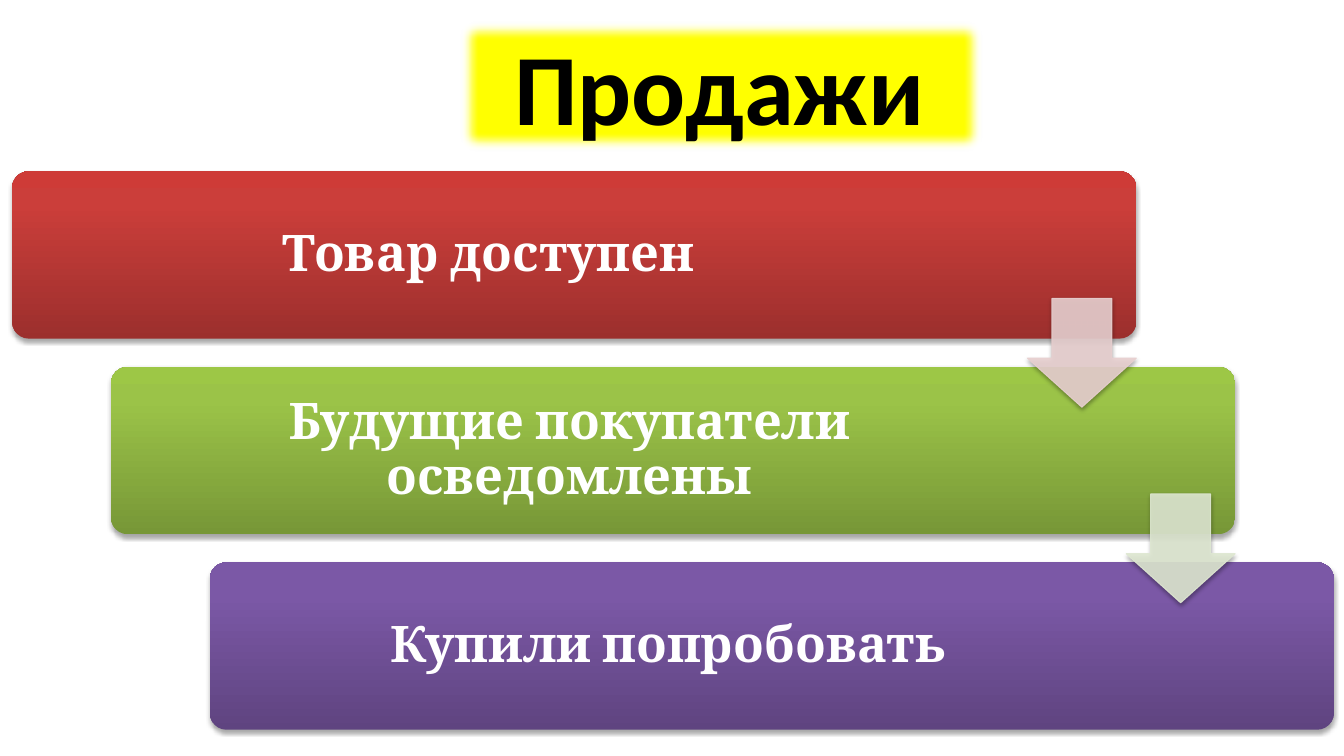
from pptx import Presentation
from pptx import util as u
from pptx.dml.color import RGBColor
from pptx.enum import shapes, text
from pptx.oxml import parse_xml
from pptx.oxml.ns import nsdecls, qn

STEPS = [
    ("Товар доступен", ("9C2F2D", "CB3E3A", "CE3B37"), 1.7, "E8D0D0"),
    ("Будущие покупатели осведомлены", ("779737", "9BC348", "9DC746"), 2.06, "DEE7D1"),
    ("Купили попробовать", ("5F4480", "7B58A6", "7C57A8"), 2.06, None),
]
BAR_WIDTH, BAR_HEIGHT = 11.15, 1.66
STEP_RIGHT, STEP_DOWN = 0.98, 1.94
ARROW_SIZE, ARROW_DROP = 1.08, 1.26
SOFT_EDGE = '<a:softEdge rad="112500"/>'
SHADOW = (
    '<a:outerShdw blurRad="40000" dist="23000" dir="5400000" rotWithShape="0">'
    '<a:srgbClr val="000000"><a:alpha val="35000"/></a:srgbClr></a:outerShdw>'
)


def color(value):
    """Return the colour for a hex string."""
    return RGBColor.from_string(value)


def add_effect(shape, effect):
    """Give the shape one effect in place of the inherited ones."""
    shape.shadow.inherit = False
    effects = shape._element.spPr.find(qn("a:effectLst"))
    effects.append(parse_xml(effect.replace(" ", f" {nsdecls('a')} ", 1)))


def fill_gradient(shape, colors):
    """Fill the shape with a gradient that rises from the first colour to the last."""
    shape.fill.gradient()
    gradient = shape._element.spPr.find(qn("a:gradFill"))
    stops = "".join(
        f'<a:gs pos="{position}"><a:srgbClr val="{value}"/></a:gs>'
        for position, value in zip((0, 80000, 100000), colors)
    )
    gradient.replace(
        gradient.find(qn("a:gsLst")),
        parse_xml(f"<a:gsLst {nsdecls('a')}>{stops}</a:gsLst>"),
    )
    gradient.find(qn("a:lin")).set("ang", "16200000")


def write(shape, wording, font, size, ink):
    """Write one bold paragraph in the shape and return the paragraph."""
    shape.text_frame.word_wrap = True
    paragraph = shape.text_frame.paragraphs[0]
    paragraph.text = wording
    style = paragraph.runs[0].font
    style.name, style.size, style.bold = font, u.Pt(size), True
    style.color.rgb = color(ink)
    return paragraph


def add_title(slide, left, top, width, height):
    """Place the soft-edged yellow title."""
    title = slide.shapes.add_shape(
        shapes.MSO_SHAPE.RECTANGLE, *map(u.Inches, (left, top, width, height)))
    title.fill.solid()
    title.fill.fore_color.rgb = color("FFFF00")
    title.line.color.rgb = color("92D050")
    title.line.width = u.Pt(4.5)
    add_effect(title, SOFT_EDGE)
    title.text_frame.margin_left = u.Inches(0.55)
    title.text_frame.vertical_anchor = text.MSO_ANCHOR.TOP
    write(title, "Продажи", "Calibri", 72, "000000").alignment = text.PP_ALIGN.LEFT


def add_step(slide, left, top, wording, colors, arrow_room):
    """Place one bar, keeping room on its right for the arrow."""
    bar = slide.shapes.add_shape(
        shapes.MSO_SHAPE.ROUNDED_RECTANGLE,
        *map(u.Inches, (left, top, BAR_WIDTH, BAR_HEIGHT)))
    bar.adjustments[0] = 0.1
    fill_gradient(bar, colors)
    bar.line.fill.background()
    add_effect(bar, SHADOW)
    frame = bar.text_frame
    frame.margin_left = frame.margin_top = frame.margin_bottom = u.Inches(0.15)
    frame.margin_right = u.Inches(0.15 + arrow_room)
    frame.vertical_anchor = text.MSO_ANCHOR.MIDDLE
    paragraph = write(bar, wording, "Cambria", 36, "FFFFFF")
    paragraph.alignment = text.PP_ALIGN.CENTER
    paragraph.line_spacing = 0.9


def add_arrow(slide, left, top, tint):
    """Place a translucent arrow at the right end of the bar at left, top."""
    arrow = slide.shapes.add_shape(
        shapes.MSO_SHAPE.DOWN_ARROW,
        u.Inches(left + BAR_WIDTH - ARROW_SIZE), u.Inches(top + ARROW_DROP),
        u.Inches(ARROW_SIZE), u.Inches(ARROW_SIZE))
    arrow.adjustments[0], arrow.adjustments[1] = 0.55, 0.45
    arrow.line.width = u.Pt(0.75)
    for paint in (arrow.fill, arrow.line.fill):
        paint.solid()
        paint.fore_color.rgb = color(tint)
    for tone in arrow._element.spPr.iter(qn("a:srgbClr")):
        tone.append(parse_xml(f'<a:alpha {nsdecls("a")} val="90000"/>'))
    add_effect(arrow, SHADOW)


def add_staircase(slide, left, top):
    """Place the descending bars, then the arrows that lead between them."""
    corners = [(left + i * STEP_RIGHT, top + i * STEP_DOWN) for i in range(len(STEPS))]
    for corner, (wording, colors, arrow_room, _) in zip(corners, STEPS):
        add_step(slide, *corner, wording, colors, arrow_room)
    for corner, (*_, tint) in zip(corners, STEPS):
        if tint:
            add_arrow(slide, *corner, tint)


def main():
    """Build the slide and save it."""
    deck = Presentation()
    deck.slide_width, deck.slide_height = u.Inches(13.33), u.Inches(7.5)
    slide = deck.slides.add_slide(deck.slide_layouts[6])
    add_title(slide, 4.55, 0.2, 5.2, 1.31)
    add_staircase(slide, 0.12, 1.7)
    deck.save("out.pptx")


if __name__ == "__main__":
    main()
